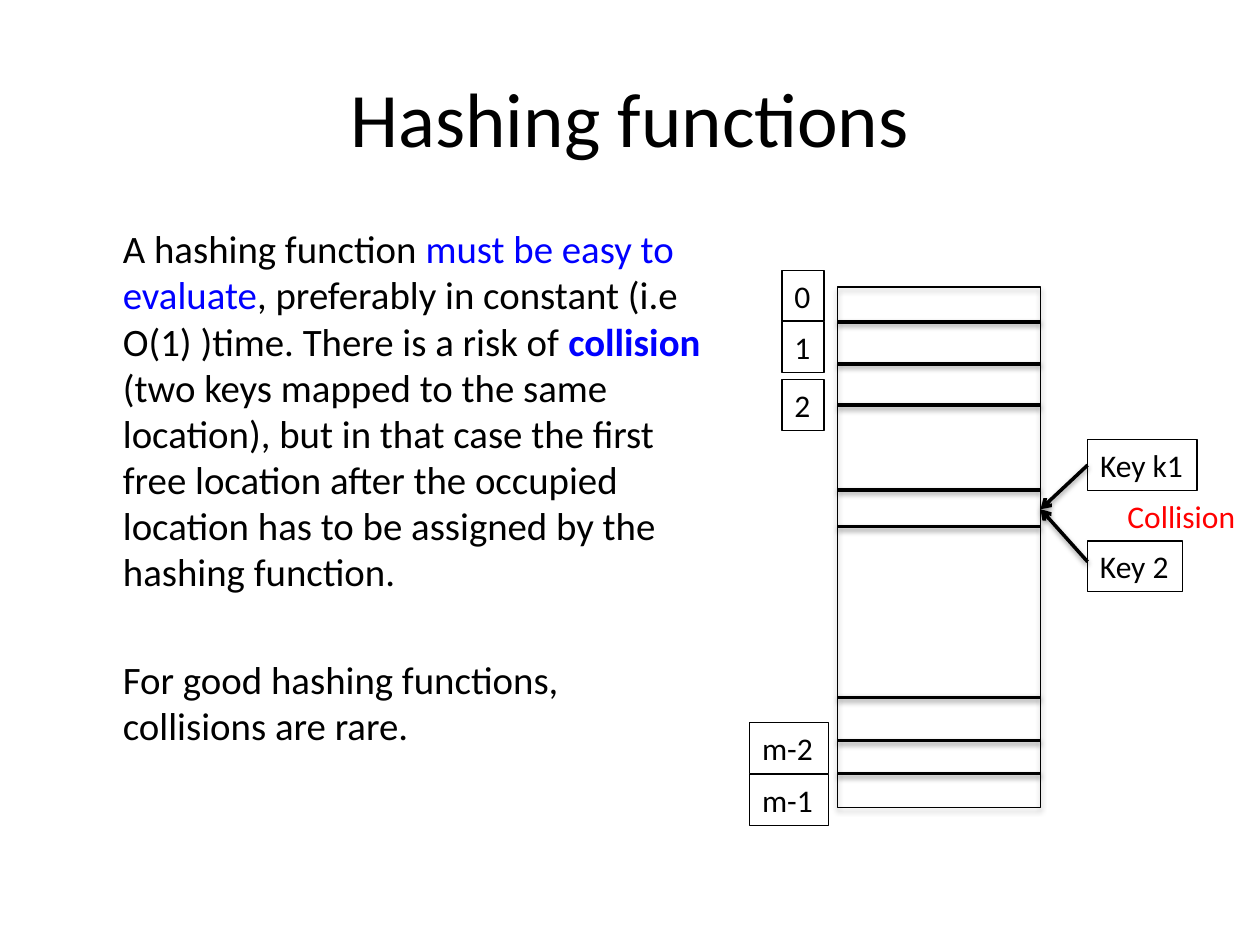
from lxml.etree import SubElement
from pptx import Presentation
from pptx.dml.color import RGBColor
from pptx.enum.shapes import MSO_CONNECTOR as CONNECTOR, MSO_SHAPE as SHAPE
from pptx.enum.text import MSO_ANCHOR as ANCHOR, MSO_AUTO_SIZE as AUTO_SIZE, PP_ALIGN as ALIGN
from pptx.oxml.ns import qn
from pptx.util import Pt

COLORS = {"ink": "000000", "accent": "0000FF", "warning": "FF0000"}


def add_run(paragraph, words, size, color="ink", bold=False):
    run = paragraph.add_run()
    run.text = words
    for attribute, value in {"name": "Calibri", "size": Pt(size), "bold": bold}.items():
        setattr(run.font, attribute, value)
    run.font.color.rgb = RGBColor.from_string(COLORS[color])


def style_line(shape, width, shadow_distance, opacity):
    shape.line.width = Pt(width)
    shape.line.color.rgb = RGBColor.from_string(COLORS["ink"])
    properties = shape._element.spPr
    for effects in properties.findall(qn("a:effectLst")):
        properties.remove(effects)
    effects = SubElement(properties, qn("a:effectLst"))
    shadow = SubElement(effects, qn("a:outerShdw"), blurRad=str(Pt(3.1)),
                        dist=str(Pt(shadow_distance)), dir="5400000", rotWithShape="0")
    shade = SubElement(shadow, qn("a:srgbClr"), val=COLORS["ink"])
    SubElement(shade, qn("a:alpha"), val=str(opacity * 1000))


deck = Presentation()
deck.slide_width, deck.slide_height = Pt(720), Pt(540)
slide = deck.slides.add_slide(deck.slide_layouts[1])

heading = slide.shapes.title
explanation = slide.placeholders[1]
for holder, box in ((heading, (36, 21.6, 648, 90)), (explanation, (36, 126, 376, 345.6))):
    for side, length in zip(("left", "top", "width", "height"), box):
        setattr(holder, side, Pt(length))
    holder.text_frame.auto_size = AUTO_SIZE.NONE
heading.text_frame.vertical_anchor = ANCHOR.MIDDLE
heading_line = heading.text_frame.paragraphs[0]
heading_line.alignment = ALIGN.CENTER
add_run(heading_line, "Hashing functions", 44)

statements = [
    (0, [("A hashing function ", "ink", False),
         ("must be easy to evaluate", "accent", False),
         (", preferably in constant (i.e O(1) )time. There is a risk of ", "ink", False),
         ("collision", "accent", True),
         (" (two keys mapped to the same location), but in that case the first free "
          "location after the occupied location has to be assigned by the hashing function.",
          "ink", False)]),
    (35, [("For good hashing functions, collisions are rare.", "ink", False)]),
]
for position, (space, phrases) in enumerate(statements):
    frame = explanation.text_frame
    statement = frame.add_paragraph() if position else frame.paragraphs[0]
    for attribute, value in {"space_before": Pt(space), "line_spacing": 0.99}.items():
        setattr(statement, attribute, value)
    indents = statement._p.get_or_add_pPr()
    indents.set("marL", str(Pt(27)))
    indents.set("indent", "0")
    SubElement(indents, qn("a:buNone"))
    for words, color, bold in phrases:
        add_run(statement, words, 22.2, color, bold)

table_left, table_right = 478.6, 594.6
hash_table = slide.shapes.add_shape(
    SHAPE.RECTANGLE, Pt(table_left), Pt(164), Pt(table_right - table_left), Pt(297.5))
hash_table.fill.background()
style_line(hash_table, 0.75, 1.8, 35)

for slot_y in (184, 208, 231.5, 280, 301, 398.5, 423.2, 442):
    slot_edge = slide.shapes.add_connector(
        CONNECTOR.STRAIGHT, Pt(table_left), Pt(slot_y), Pt(table_right), Pt(slot_y))
    style_line(slot_edge, 2, 1.6, 38)

labels = {}
for words, left, top, width, color in (
    ("0", 446.8, 154.5, 24, "ink"),
    ("1", 446.8, 183.8, 24, "ink"),
    ("2", 446.8, 217, 24, "ink"),
    ("m-2", 428.4, 413, 45, "ink"),
    ("m-1", 428.4, 442.6, 45, "ink"),
    ("Key k1", 621.5, 251.3, 62.5, "ink"),
    ("Key 2", 621.5, 309.2, 54.2, "ink"),
    ("Collision", 637.2, 280.2, 77, "warning"),
):
    label = slide.shapes.add_textbox(Pt(left), Pt(top), Pt(width), Pt(29))
    for attribute, value in {"word_wrap": False, "auto_size": AUTO_SIZE.SHAPE_TO_FIT_TEXT}.items():
        setattr(label.text_frame, attribute, value)
    add_run(label.text_frame.paragraphs[0], words, 18, color)
    if color == "ink":
        label.line.width = Pt(0.75)
        label.line.color.rgb = RGBColor.from_string(COLORS["ink"])
    labels[words] = label

for key, key_y in (("Key k1", 265.8), ("Key 2", 321)):
    mapping = slide.shapes.add_connector(
        CONNECTOR.STRAIGHT, Pt(621.5), Pt(key_y), Pt(table_right), Pt(291))
    if key == "Key k1":
        mapping.begin_connect(labels[key], 1)
    style_line(mapping, 2, 1.6, 38)
    SubElement(mapping.line._get_or_add_ln(), qn("a:tailEnd"), type="arrow")

deck.save("out.pptx")
